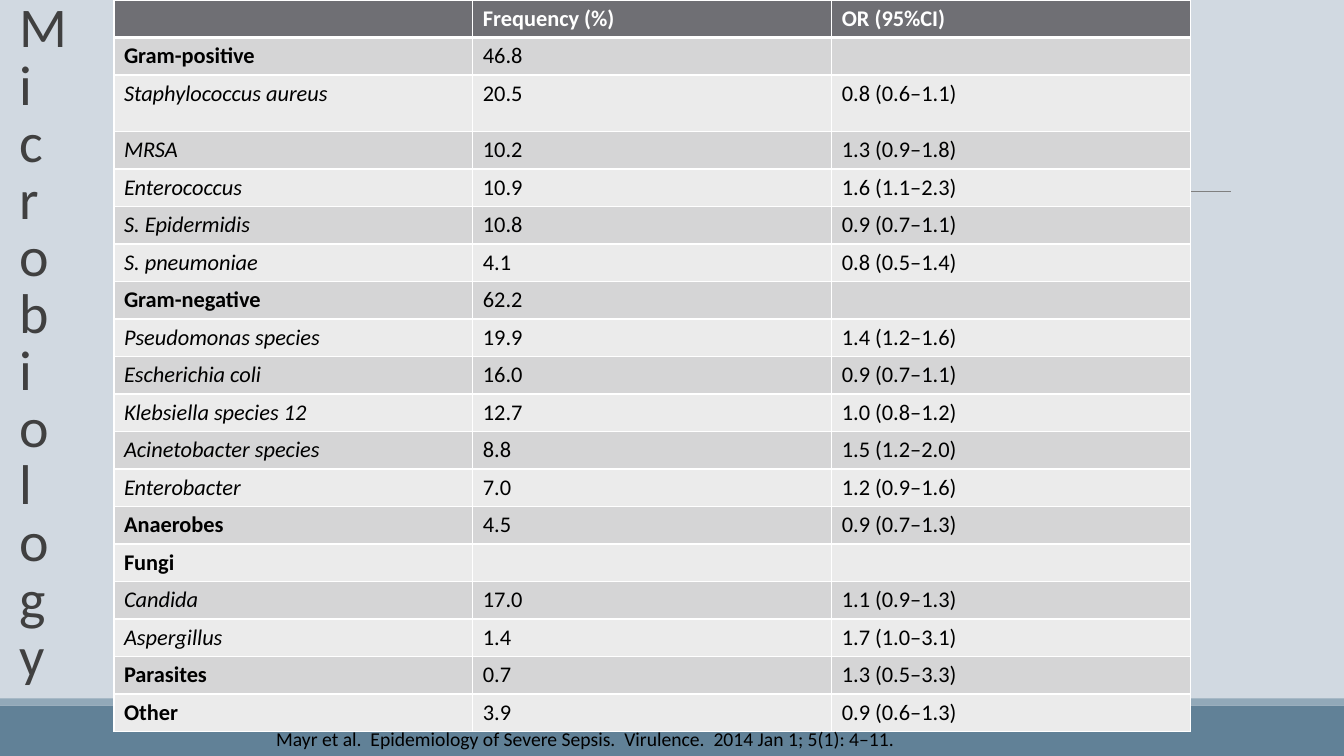
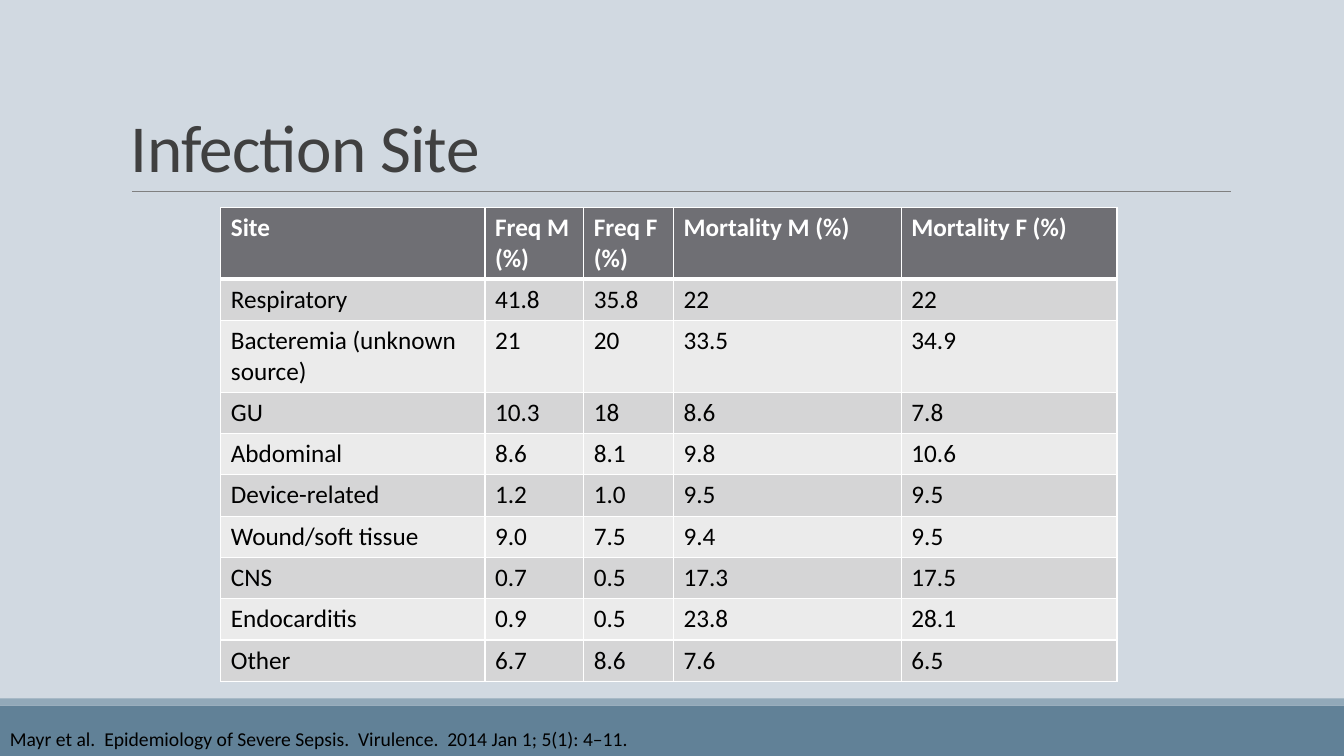
from pptx import Presentation
from pptx.dml.color import RGBColor
from pptx.enum.shapes import MSO_CONNECTOR, MSO_SHAPE
from pptx.enum.text import MSO_ANCHOR
from pptx.oxml.ns import qn
from pptx.util import Inches, Pt
from lxml.etree import SubElement

FONT = "Calibri"
WIDE, HIGH = 13.33, 7.5
HUES = {
    "back": "D1D9E1", "band": "618197", "strip": "92A9B9", "rule": "808080",
    "head": "6F6F74", "odd": "D5D5D6", "even": "EBEBEB",
    "title": "404040", "text": "000000", "white": "FFFFFF",
}
CITE = "Mayr et al.  Epidemiology of Severe Sepsis.  Virulence.  2014 Jan 1; 5(1): 4–11."

GERMS = [
    ("", "Frequency (%)", "OR (95%CI)"),
    ("Gram-positive", "46.8", ""),
    ("Staphylococcus aureus", "20.5", "0.8 (0.6–1.1)"),
    ("MRSA", "10.2", "1.3 (0.9–1.8)"),
    ("Enterococcus", "10.9", "1.6 (1.1–2.3)"),
    ("S. Epidermidis", "10.8", "0.9 (0.7–1.1)"),
    ("S. pneumoniae", "4.1", "0.8 (0.5–1.4)"),
    ("Gram-negative", "62.2", ""),
    ("Pseudomonas species", "19.9", "1.4 (1.2–1.6)"),
    ("Escherichia coli", "16.0", "0.9 (0.7–1.1)"),
    ("Klebsiella species 12", "12.7", "1.0 (0.8–1.2)"),
    ("Acinetobacter species", "8.8", "1.5 (1.2–2.0)"),
    ("Enterobacter", "7.0", "1.2 (0.9–1.6)"),
    ("Anaerobes", "4.5", "0.9 (0.7–1.3)"),
    ("Fungi", "", ""),
    ("Candida", "17.0", "1.1 (0.9–1.3)"),
    ("Aspergillus", "1.4", "1.7 (1.0–3.1)"),
    ("Parasites", "0.7", "1.3 (0.5–3.3)"),
    ("Other", "3.9", "0.9 (0.6–1.3)"),
]
GROUPS = {"Gram-positive", "Gram-negative", "Anaerobes", "Fungi", "Parasites", "Other"}

SITES = [
    ("Site", "Freq M (%)", "Freq F (%)", "Mortality M (%)", "Mortality F (%)"),
    ("Respiratory", "41.8", "35.8", "22", "22"),
    ("Bacteremia (unknown source)", "21", "20", "33.5", "34.9"),
    ("GU", "10.3", "18", "8.6", "7.8"),
    ("Abdominal", "8.6", "8.1", "9.8", "10.6"),
    ("Device-related", "1.2", "1.0", "9.5", "9.5"),
    ("Wound/soft tissue", "9.0", "7.5", "9.4", "9.5"),
    ("CNS", "0.7", "0.5", "17.3", "17.5"),
    ("Endocarditis", "0.9", "0.5", "23.8", "28.1"),
    ("Other", "6.7", "8.6", "7.6", "6.5"),
]


def color(name):
    return RGBColor.from_string(HUES[name])


def paint(fill, name):
    fill.solid()
    fill.fore_color.rgb = color(name)


def write(para, text, size, hue, **style):
    """Add one styled run; an empty text only sets the line height."""
    if not text:
        SubElement(para._p, qn("a:endParaRPr"), sz=str(size * 100))
        return None
    run = para.add_run()
    run.text = text
    for key, value in {"name": FONT, "size": Pt(size), **style}.items():
        setattr(run.font, key, value)
    run.font.color.rgb = color(hue)
    return run


def label(slide, box, text, size, hue, anchor=MSO_ANCHOR.TOP):
    frame = slide.shapes.add_textbox(*map(Inches, box)).text_frame
    frame.word_wrap = True
    frame.vertical_anchor = anchor
    para = frame.paragraphs[0]
    return para, write(para, text, size, hue)


def title(slide, box, text, size):
    para, run = label(slide, box, text, size, "title", MSO_ANCHOR.BOTTOM)
    para.line_spacing = 0.85
    run._r.get_or_add_rPr().set("spc", "-50")


def cite(slide, left, width):
    label(slide, (left, 7.16, width, 0.34), CITE, 14, "text")


def base(deck):
    """New slide with the shared background, bands and title rule."""
    slide = deck.slides.add_slide(deck.slide_layouts[6])
    paint(slide.background.fill, "back")
    for top, height, hue in ((7, 0.5, "band"), (6.93, 0.07, "strip")):
        bar = slide.shapes.add_shape(
            MSO_SHAPE.RECTANGLE, *map(Inches, (0, top, WIDE, height)))
        bar.shadow.inherit = False
        paint(bar.fill, hue)
        bar.line.fill.background()
    rule = slide.shapes.add_connector(
        MSO_CONNECTOR.STRAIGHT, *map(Inches, (1.31, 1.9, 12.21, 1.9)))
    rule.line.color.rgb = color("rule")
    rule.line.width = Pt(0.5)
    SubElement(rule._element.spPr, qn("a:effectLst"))
    return slide


def edge(cell, row):
    """White cell borders, thick below the header row."""
    props = cell._tc.get_or_add_tcPr()
    thick = {"T": row == 1, "B": row == 0}
    for side in "LRTB":
        width = Pt(3 if thick.get(side) else 1)
        line = SubElement(props, qn(f"a:ln{side}"), w=str(int(width)))
        fill = SubElement(line, qn("a:solidFill"))
        SubElement(fill, qn("a:srgbClr"), val=HUES["white"])


def grid(slide, left, top, cols, rows, data, size, style):
    """Banded table; style(row, col, text) gives the font format of a body cell."""
    box = (left, top, sum(cols), sum(rows))
    table = slide.shapes.add_table(
        len(rows), len(cols), *map(Inches, box)).table
    for col, width in zip(table.columns, cols):
        col.width = Inches(width)
    for r, height in enumerate(rows):
        table.rows[r].height = Inches(height)
        band = "head" if r == 0 else "odd" if r % 2 else "even"
        for c, text in enumerate(data[r]):
            cell = table.cell(r, c)
            edge(cell, r)
            paint(cell.fill, band)
            look = style(c, text) if r else {"bold": True}
            write(cell.text_frame.paragraphs[0], text, size,
                  "text" if r else "white", **look)


def germ(col, text):
    """Groups are bold and species italic in the first column."""
    group = text in GROUPS
    return {"bold": col == 0 and group, "italic": col == 0 and not group}


def plain(col, text):
    return {"bold": False}


def biology(deck):
    slide = base(deck)
    rows = [0.56 if row[0] == "Staphylococcus aureus" else 0.37 for row in GERMS]
    grid(slide, 1.13, 0, [3.56] * 3, rows, GERMS, 16, germ)
    # Narrow box stacks the letters
    title(slide, (0.09, 3.45, 0.52, 3.42), "Microbiology", 40)
    cite(slide, 2.64, WIDE - 2.64)


def places(deck):
    slide = base(deck)
    # Header and third row hold two lines
    rows = [0.71 if r in (0, 2) else 0.41 for r in range(len(SITES))]
    grid(slide, 2.19, 2.06, [2.62, 0.98, 0.89, 2.26, 2.14], rows, SITES, 18, plain)
    title(slide, (1.2, 0.31, 11, 1.59), "Infection Site", 48)
    cite(slide, 0, 9.61)


def main():
    deck = Presentation()
    deck.slide_width, deck.slide_height = Inches(WIDE), Inches(HIGH)
    biology(deck)
    places(deck)
    deck.save("out.pptx")


if __name__ == "__main__":
    main()
